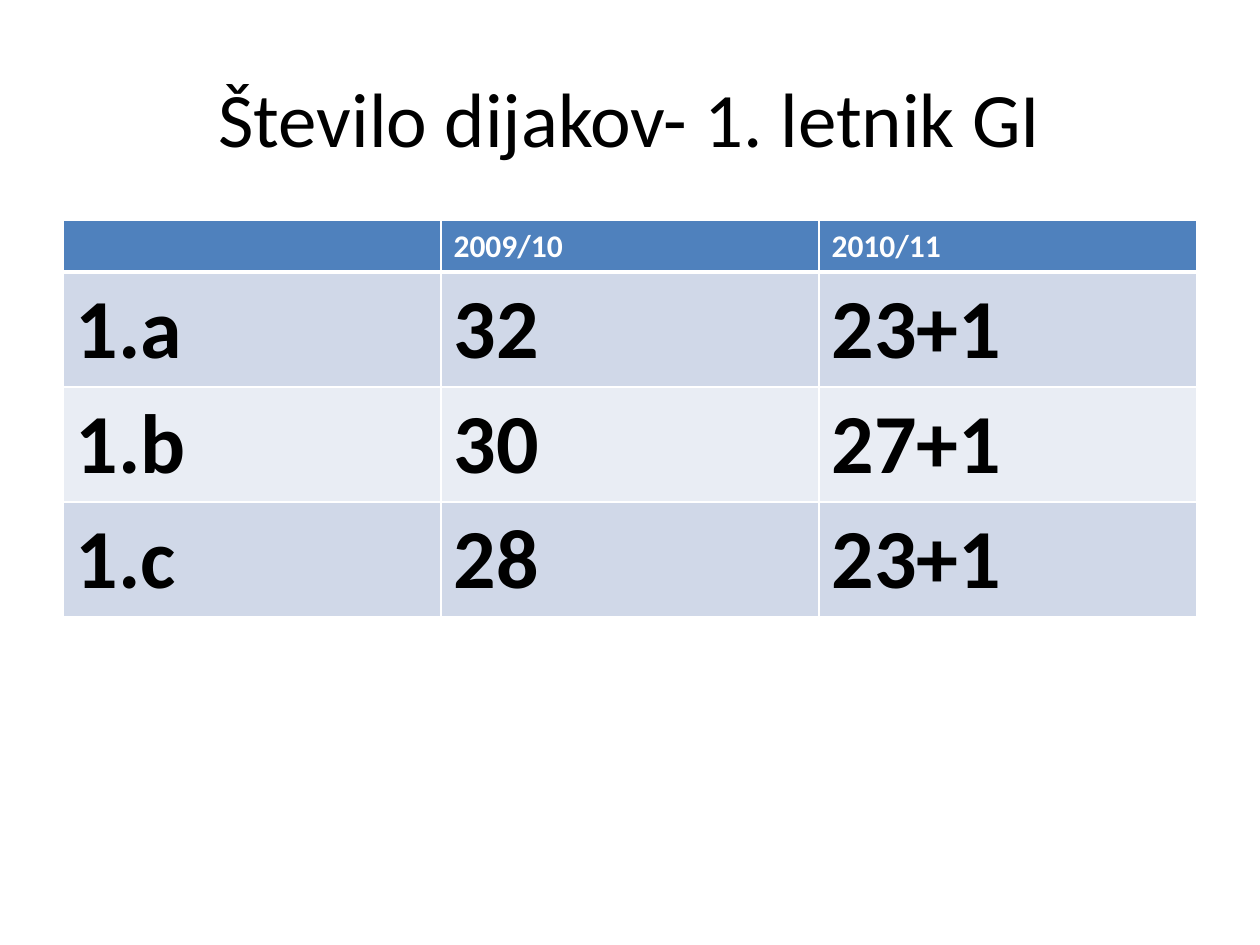
from lxml import etree
from pptx import Presentation
from pptx.dml.color import RGBColor
from pptx.enum.text import MSO_ANCHOR, PP_ALIGN
from pptx.oxml.ns import qn
from pptx.util import Cm, Pt

MIDDLE = MSO_ANCHOR.MIDDLE
CENTER = PP_ALIGN.CENTER

FONT = "Calibri"
COLORS = {
    "text": "000000",
    "header_text": "FFFFFF",
    "header": "4F81BD",
    "odd_row": "D0D8E8",
    "even_row": "E9EDF4",
    "border": "FFFFFF",
}
HEADER_HEIGHT = Cm(1.03)
CLASS_HEIGHT = Cm(2.32)
STUDENTS = [
    ["", "2009/10", "2010/11"],
    ["1.a", "32", "23+1"],
    ["1.b", "30", "27+1"],
    ["1.c", "28", "23+1"],
]


def set_font(paragraph, size, color, bold=False):
    font = paragraph.font
    font.name, font.size, font.bold = FONT, Pt(size), bold
    font.color.rgb = RGBColor.from_string(COLORS[color])


def set_borders(cell, top, bottom):
    """Draw the cell's four borders; must run before the cell is filled."""
    properties = cell._tc.get_or_add_tcPr()
    for side, width in (("L", 1), ("R", 1), ("T", top), ("B", bottom)):
        line = etree.SubElement(properties, qn(f"a:ln{side}"), w=str(Pt(width)))
        fill = etree.SubElement(line, qn("a:solidFill"))
        etree.SubElement(fill, qn("a:srgbClr"), val=COLORS["border"])


def add_title(slide, left, top, width, height):
    frame = slide.shapes.add_textbox(left, top, width, height).text_frame
    frame.word_wrap = True
    frame.vertical_anchor = MIDDLE
    title = frame.paragraphs[0]
    title.text = "Število dijakov- 1. letnik GI"
    title.alignment = CENTER
    set_font(title, 44, "text")


def add_student_table(slide, left, top, width):
    height = HEADER_HEIGHT + CLASS_HEIGHT * (len(STUDENTS) - 1)
    table = slide.shapes.add_table(
        len(STUDENTS), len(STUDENTS[0]), left, top, width, height
    ).table

    for r, entries in enumerate(STUDENTS):
        is_header = r == 0
        table.rows[r].height = HEADER_HEIGHT if is_header else CLASS_HEIGHT
        band = "header" if is_header else "odd_row" if r % 2 else "even_row"
        for c, entry in enumerate(entries):
            cell = table.cell(r, c)
            # The rule under the header is thicker than the rest
            set_borders(cell, top=3 if r == 1 else 1, bottom=3 if is_header else 1)
            cell.fill.solid()
            cell.fill.fore_color.rgb = RGBColor.from_string(COLORS[band])
            cell.text = entry
            size, color = (18, "header_text") if is_header else (48, "text")
            set_font(cell.text_frame.paragraphs[0], size, color, bold=True)


def main():
    presentation = Presentation()
    presentation.slide_width, presentation.slide_height = Cm(25.4), Cm(19.05)
    slide = presentation.slides.add_slide(presentation.slide_layouts[6])

    margin = Cm(1.27)
    content_width = presentation.slide_width - 2 * margin
    add_title(slide, margin, Cm(0.76), content_width, Cm(3.18))
    add_student_table(slide, margin, Cm(4.45), content_width)

    presentation.save("out.pptx")


if __name__ == "__main__":
    main()
